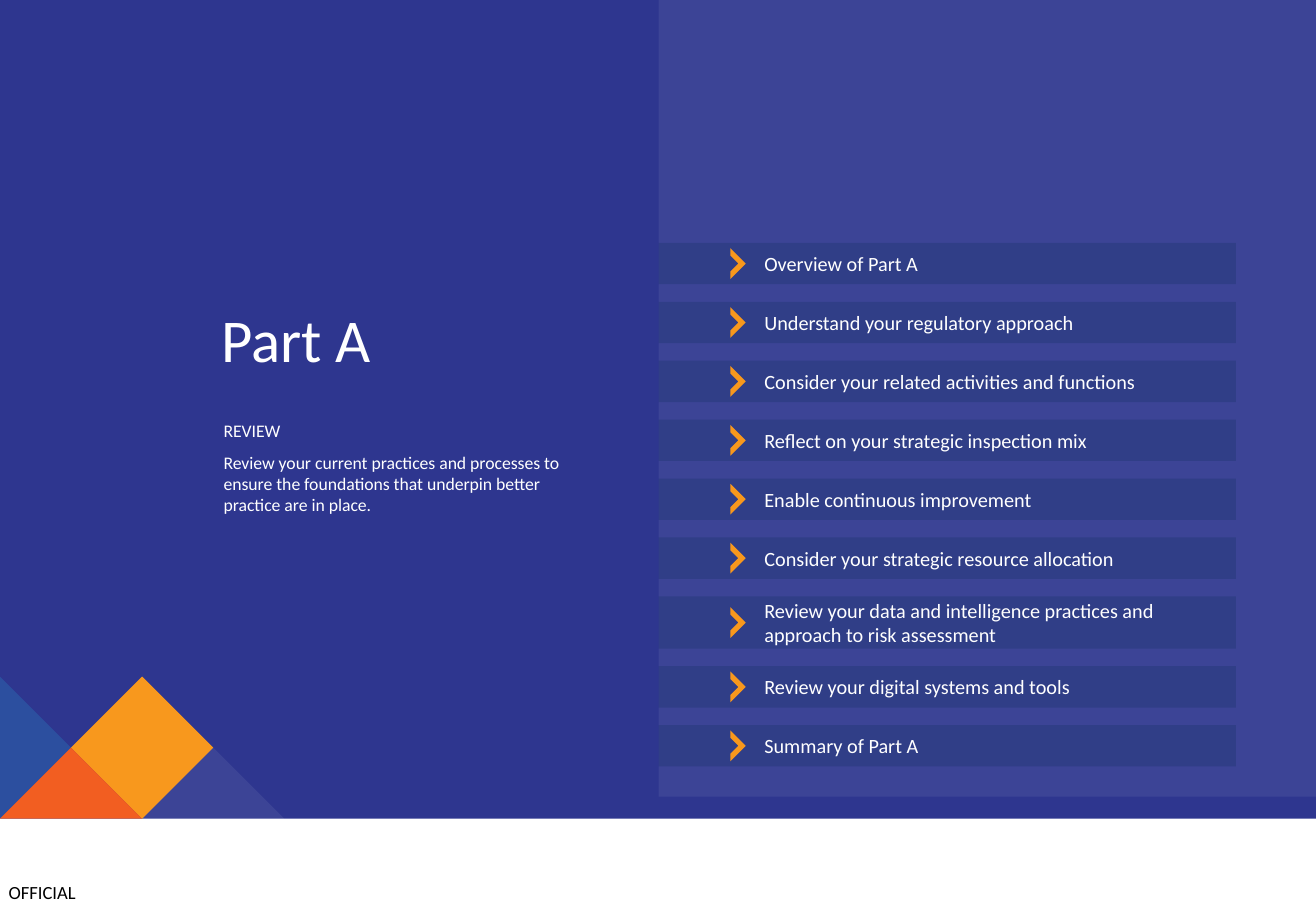
from dataclasses import dataclass

import lxml.etree
import pptx
import pptx.dml.color
import pptx.enum.shapes
import pptx.enum.text
import pptx.oxml.ns
import pptx.util

Inches = pptx.util.Inches
Preset = pptx.enum.shapes.MSO_SHAPE
Anchor = pptx.enum.text.MSO_ANCHOR

COLOURS = {
    "navy": "2E368F",
    "white": "FFFFFF",
    "black": "000000",
    "bar": "00264D",
    "amber": "F8981D",
    "orange": "F25E21",
    "sky": "25B3E0",
}
FONT = "Calibri"
SLIDE_WIDTH, SLIDE_HEIGHT = 10.83, 7.5
COVER_HEIGHT = 6.74
PANEL_LEFT, PANEL_BOTTOM = 5.42, 6.56
BAR_WIDTH, BAR_HEIGHT, TALL_BAR_HEIGHT = 4.75, 0.34, 0.43
BARS_TOP, BARS_BOTTOM = 2.0, 6.31
CHEVRON_LEFT, CHEVRON_SIZE = 5.92, 0.18
TILE = 1.17 / 2


@dataclass
class Topic:
    text: str
    height: float = BAR_HEIGHT


@dataclass
class Tile:
    """Corners count tiles rightwards and upwards from the cover's bottom left."""
    colour: str
    corners: list[tuple[int, int]]
    opacity: int = 100


TOPICS = [
    Topic("Overview of Part A"),
    Topic("Understand your regulatory approach"),
    Topic("Consider your related activities and functions"),
    Topic("Reflect on your strategic inspection mix"),
    Topic("Enable continuous improvement"),
    Topic("Consider your strategic resource allocation"),
    Topic("Review your data and intelligence practices and approach to risk assessment",
          TALL_BAR_HEIGHT),
    Topic("Review your digital systems and tools"),
    Topic("Summary of Part A"),
]
TILES = [
    Tile("amber", [(2, 2), (1, 1), (2, 0), (3, 1)]),
    Tile("sky", [(0, 2), (0, 0), (1, 1)], 20),
    Tile("white", [(3, 1), (2, 0), (4, 0)], 7),
    Tile("orange", [(0, 0), (2, 0), (1, 1)]),
]


def paint(shape, colour: str, opacity: int = 100) -> None:
    shape.shadow.inherit = False
    shape.line.fill.background()
    shape.fill.solid()
    shape.fill.fore_color.rgb = pptx.dml.color.RGBColor.from_string(COLOURS[colour])
    if opacity < 100:
        qualified = pptx.oxml.ns.qn
        colour_element = shape.element.spPr.find(qualified("a:solidFill"))[0]
        alpha = lxml.etree.SubElement(colour_element, qualified("a:alpha"))
        alpha.set("val", str(opacity * 1000))


def add_preset(slide, preset, left: float, top: float, width: float, height: float,
               colour: str, opacity: int = 100):
    shape = slide.shapes.add_shape(
        preset, Inches(left), Inches(top), Inches(width), Inches(height))
    paint(shape, colour, opacity)
    return shape


def set_frame(frame, left: float, top: float, right: float, bottom: float,
              anchor=Anchor.TOP, wrap: bool = True) -> None:
    frame.margin_left, frame.margin_top = Inches(left), Inches(top)
    frame.margin_right, frame.margin_bottom = Inches(right), Inches(bottom)
    frame.vertical_anchor = anchor
    frame.word_wrap = wrap
    frame.auto_size = pptx.enum.text.MSO_AUTO_SIZE.NONE


def write(paragraph, text: str, size: float, colour: str = "white") -> None:
    paragraph.alignment = pptx.enum.text.PP_ALIGN.LEFT
    run = paragraph.add_run()
    run.text = text
    run.font.name = FONT
    run.font.size = pptx.util.Pt(size)
    run.font.color.rgb = pptx.dml.color.RGBColor.from_string(COLOURS[colour])


def add_cover(slide) -> None:
    title = slide.shapes.title
    background = add_preset(slide, Preset.RECTANGLE, 0, 0, SLIDE_WIDTH, COVER_HEIGHT, "navy")
    title.element.addprevious(background.element)
    title.left, title.top = Inches(1.23), Inches(2.32)
    title.width, title.height = Inches(2.74), Inches(0.93)
    set_frame(title.text_frame, 0.59, 0.05, 0, 0.05, Anchor.MIDDLE)
    write(title.text_frame.paragraphs[0], "Part A", 36)
    add_preset(slide, Preset.RECTANGLE, PANEL_LEFT, 0,
               SLIDE_WIDTH - PANEL_LEFT, PANEL_BOTTOM, "white", 7)


def add_tile(slide, tile: Tile) -> None:
    points = [(Inches(column * TILE), Inches(COVER_HEIGHT - row * TILE))
              for column, row in tile.corners]
    builder = slide.shapes.build_freeform(*points[0])
    builder.add_line_segments(points[1:], close=True)
    paint(builder.convert_to_shape(), tile.colour, tile.opacity)


def add_topic(slide, topic: Topic, top: float) -> None:
    bar = add_preset(slide, Preset.FLOWCHART_PROCESS, PANEL_LEFT, top,
                     BAR_WIDTH, topic.height, "bar", 20)
    set_frame(bar.text_frame, 0.87, 0.05, 0.1, 0.05, Anchor.MIDDLE)
    write(bar.text_frame.paragraphs[0], topic.text, 12)
    chevron = add_preset(slide, Preset.HALF_FRAME, CHEVRON_LEFT,
                         top + (topic.height - CHEVRON_SIZE) / 2,
                         CHEVRON_SIZE, CHEVRON_SIZE, "amber")
    chevron.adjustments[0] = chevron.adjustments[1] = 0.24
    chevron.rotation = 135


def add_topics(slide) -> None:
    total_height = sum(topic.height for topic in TOPICS)
    gap = (BARS_BOTTOM - BARS_TOP - total_height) / (len(TOPICS) - 1)
    top = BARS_TOP
    for topic in TOPICS:
        add_topic(slide, topic, top)
        top += topic.height + gap


def add_summary(slide) -> None:
    box = slide.shapes.add_textbox(Inches(1.84), Inches(3.41), Inches(2.82), Inches(1.24))
    frame = box.text_frame
    set_frame(frame, 0, 0.05, 0, 0.05)
    write(frame.paragraphs[0], "REVIEW", 10.5)
    description = frame.add_paragraph()
    description.space_before = pptx.util.Pt(6)
    write(description, "Review your current practices and processes to ensure the "
          "foundations that underpin better practice are in place.", 10.5)


def add_marking(slide) -> None:
    box = slide.shapes.add_textbox(Inches(0.07), Inches(7.25), Inches(0.59), Inches(0.18))
    set_frame(box.text_frame, 0, 0, 0, 0, wrap=False)
    write(box.text_frame.paragraphs[0], "OFFICIAL", 11, "black")


def main() -> None:
    presentation = pptx.Presentation()
    presentation.slide_width = Inches(SLIDE_WIDTH)
    presentation.slide_height = Inches(SLIDE_HEIGHT)
    title_only = presentation.slide_layouts.get_by_name("Title Only")
    slide = presentation.slides.add_slide(title_only)
    add_cover(slide)
    for tile in TILES:
        add_tile(slide, tile)
    add_topics(slide)
    add_summary(slide)
    add_marking(slide)
    presentation.save("out.pptx")


if __name__ == "__main__":
    main()
